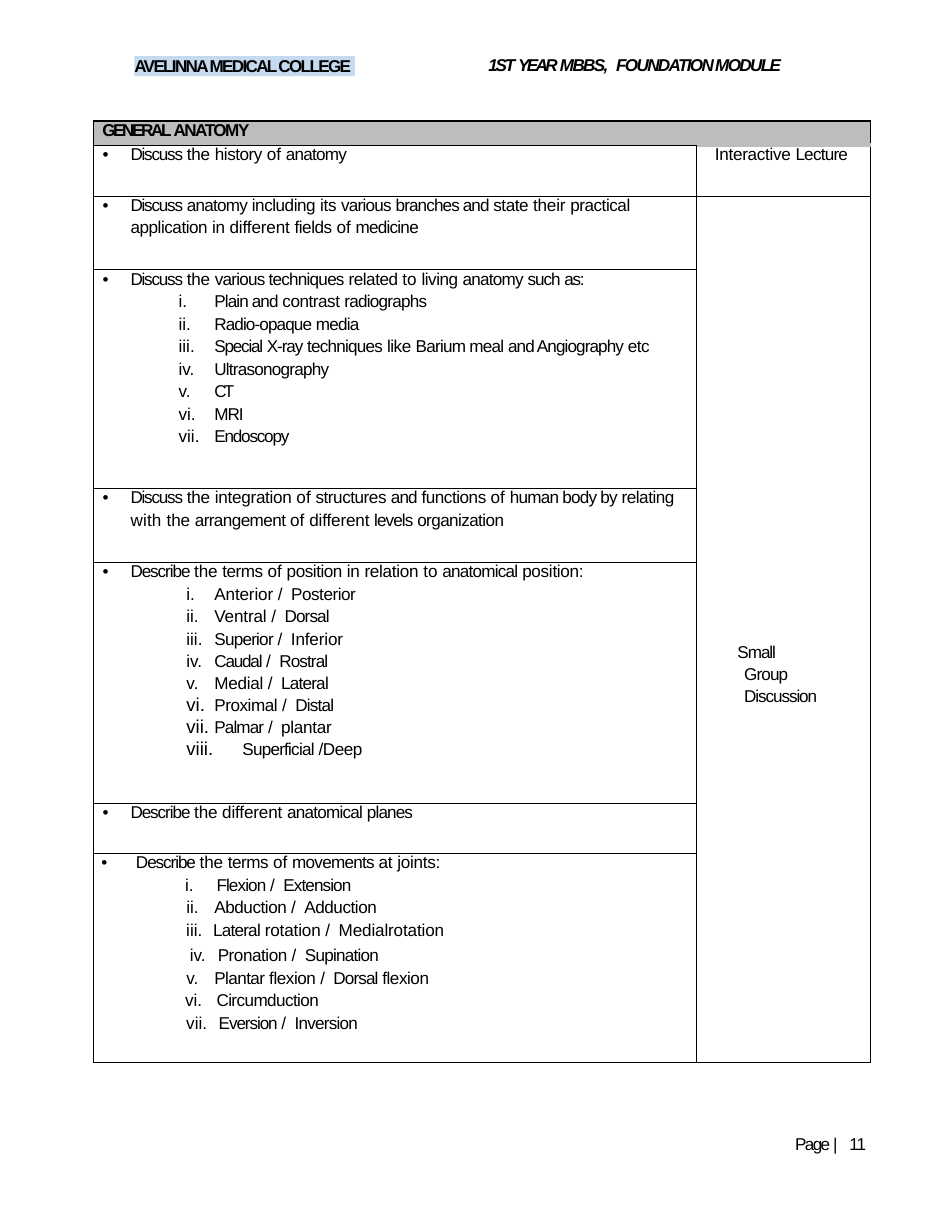
import collections
import itertools

import lxml.etree
import pptx
import pptx.dml.color
import pptx.enum.shapes
import pptx.enum.text
import pptx.oxml.ns
import pptx.util

Pt = pptx.util.Pt
qn = pptx.oxml.ns.qn

Line = collections.namedtuple(
    "Line", "text mark left hanging before mark_size",
    defaults=(None, 23.9, 0, 2.1, None))

# Letter spacing in points for single words; all other words use the default.
DEFAULT_TRACKING = -0.5
TRACKING = {
    "Discuss": -0.8, "Describe": -0.7, "Special": -0.8, "Endoscopy": -0.8,
    "Eversion": -0.7, "Small": -0.7, "Discussion": -0.7, "X-ray": -0.7,
    "MRI": -0.7, "CT": -1.8, "such": -0.7, "as:": -0.8, "Caudal": -0.8,
    "the": -0.1, "of": 0, "to": 0, "in": -0.1, "at": -0.1, "with": 0.1,
    "/": 1.2, "their": -0.1, "its": -0.2, "different": -0.1,
    "and": -0.6, "branches": -0.6, "Angiography": -0.6, "levels": -0.6,
    "planes": -0.6, "Plain": -0.6, "Radio-opaque": -0.6, "Group": -0.6,
    "Dorsal": -0.6, "Rostral": -0.6, "Flexion": -0.6, "Extension": -0.6,
    "Palmar": -0.6, "history": -0.3, "including": -0.3, "state": -0.3,
    "practical": -0.3, "application": -0.3, "fields": -0.3, "related": -0.3,
    "living": -0.3, "contrast": -0.3, "like": -0.3, "etc": -0.3,
    "structures": -0.3, "functions": -0.3, "relating": -0.3, "terms": -0.3,
    "position": -0.3, "Posterior": -0.3, "Proximal": -0.3, "/Deep": -0.3,
    "Abduction": -0.3, "Adduction": -0.3, "Pronation": -0.3, "flexion": -0.3,
    "integration": -0.2, "relation": -0.2, "position:": -0.2, "joints:": -0.2,
    "Medial": -0.2, "plantar": -0.2, "Interactive": -0.2, "Anterior": -0.1,
    "Ventral": -0.1, "Inferior": -0.1, "rotation": -0.1,
    "Medialrotation": -0.1, "arrangement": -0.4, "organization": -0.4,
    "Plantar": -0.4, "Circumduction": -0.4,
    "GENERAL": -1.6, "ANATOMY": -1, "1ST": -1.4, "YEAR": -1.7, "MBBS,": -1.1,
    "FOUNDATION": -1.1, "MODULE": -1.1, "AVELINNA": -1.1, "MEDICAL": -1.1,
    "COLLEGE": -1.1, "Page": -1.1, "|": 2.2, "11": -0.6,
}


def color(value):
    return pptx.dml.color.RGBColor.from_string(value)


def bullet(text, left=23.9, hanging=-18, before=0.2):
    return Line(text, "bullet", left, hanging, before)


def numbered(text, left=77.8, hanging=-18, before=2.2, mark_size=None):
    return Line(text, "roman", left, hanging, before, mark_size)


class SlideBuilder:
    font = {"name": "Arial", "size": Pt(11)}
    ink = "000000"
    gray = "BDBDBD"
    highlight = "C5D9EF"

    def __init__(self, slide):
        self.slide = slide

    def add_runs(self, paragraph, text, **emphasis):
        """Add the text as runs, one for each stretch of equal letter spacing."""
        words = text.split(" ")
        pieces = [word + " " for word in words[:-1]] + words[-1:]
        spacing = lambda piece: TRACKING.get(piece.strip(), DEFAULT_TRACKING)
        for tracking, group in itertools.groupby(pieces, spacing):
            run = paragraph.add_run()
            run.text = "".join(group)
            for name, value in {**self.font, **emphasis}.items():
                setattr(run.font, name, value)
            run.font.color.rgb = color(self.ink)
            run.font._element.set("spc", str(round(tracking * 100)))

    def format_line(self, paragraph, line):
        properties = paragraph._p.get_or_add_pPr()
        properties.set("marL", str(Pt(line.left)))
        properties.set("indent", str(Pt(line.hanging)))
        paragraph.space_before = Pt(line.before)
        if line.mark_size:
            lxml.etree.SubElement(properties, qn("a:buSzPct"), val=str(line.mark_size * 1000))
        if line.mark:
            lxml.etree.SubElement(properties, qn("a:buFont"), typeface="Arial")
        if line.mark == "bullet":
            lxml.etree.SubElement(properties, qn("a:buChar"), char="•")
        elif line.mark == "roman":
            paragraph.level = 1
            lxml.etree.SubElement(properties, qn("a:buAutoNum"), type="romanLcPeriod")

    def fill_frame(self, frame, text, line_spacing=None, **emphasis):
        layout = {"margin_left": 0, "margin_top": 0, "margin_right": 0,
                  "margin_bottom": 0, "word_wrap": True,
                  "auto_size": pptx.enum.text.MSO_AUTO_SIZE.NONE,
                  "vertical_anchor": pptx.enum.text.MSO_ANCHOR.TOP}
        for name, value in layout.items():
            setattr(frame, name, value)
        paragraph = frame.paragraphs[0]
        paragraph.alignment = pptx.enum.text.PP_ALIGN.LEFT
        if line_spacing:
            paragraph.line_spacing = Pt(line_spacing)
        self.add_runs(paragraph, text, **emphasis)

    def title(self, text, left, top, width, height):
        shape = self.slide.shapes.title
        place = {"left": left, "top": top, "width": width, "height": height}
        for name, value in place.items():
            setattr(shape, name, Pt(value))
        self.fill_frame(shape.text_frame, text, bold=True, italic=True)

    def text(self, text, left, top, width, height, line_spacing):
        shape = self.slide.shapes.add_textbox(Pt(left), Pt(top), Pt(width), Pt(height))
        self.fill_frame(shape.text_frame, text, line_spacing)

    def highlighted(self, text, left, top, width, height, line_spacing):
        shape = self.slide.shapes.add_shape(
            pptx.enum.shapes.MSO_SHAPE.RECTANGLE, Pt(left), Pt(top), Pt(width), Pt(height))
        shape.shadow.inherit = False
        shape.fill.solid()
        shape.fill.fore_color.rgb = color(self.highlight)
        shape.line.fill.background()
        self.fill_frame(shape.text_frame, text, line_spacing, bold=True)

    def table(self, left, top, columns, rows):
        frame = self.slide.shapes.add_table(
            len(rows), len(columns), Pt(left), Pt(top), Pt(sum(columns)), Pt(sum(rows)))
        table = frame.table
        table.first_row = table.horz_banding = False
        for column, width in zip(table.columns, columns):
            column.width = Pt(width)
        for row, height in zip(table.rows, rows):
            row.height = Pt(height)
        for cell in table.iter_cells():
            cell.margin_left = cell.margin_top = cell.margin_right = cell.margin_bottom = 0
            self.border(cell)
            cell.fill.background()
        return table

    def border(self, cell, **special):
        """Draw all four sides; special gives (width, color) for single sides."""
        properties = cell._tc.get_or_add_tcPr()
        for index, side in enumerate(("L", "R", "T", "B")):
            tag = qn("a:ln" + side)
            for old in properties.findall(tag):
                properties.remove(old)
            width, value = special.get(side, (0.5, self.ink))
            line = lxml.etree.Element(tag, w=str(Pt(width)))
            fill = lxml.etree.SubElement(line, qn("a:solidFill"))
            lxml.etree.SubElement(fill, qn("a:srgbClr"), val=value)
            properties.insert(index, line)

    def cell(self, cell, lines, **emphasis):
        frame = cell.text_frame
        for index, line in enumerate(lines):
            paragraph = frame.add_paragraph() if index else frame.paragraphs[0]
            self.format_line(paragraph, line)
            for part, text in enumerate(line.text.split("\n")):
                if part:
                    paragraph.add_line_break()
                self.add_runs(paragraph, text, **emphasis)


OBJECTIVES = [
    [bullet("Discuss the history of anatomy", before=1.1)],
    [bullet("Discuss anatomy including its various branches and state their practical"),
     Line("application in different fields of medicine")],
    [bullet("Discuss the various techniques related to living anatomy such as:")]
    + [numbered(text, hanging=-23) for text in (
        "Plain and contrast radiographs", "Radio-opaque media",
        "Special X-ray techniques like Barium meal and Angiography etc",
        "Ultrasonography", "CT", "MRI", "Endoscopy")],
    [bullet("Discuss the integration of structures and functions of human body by relating"),
     Line("with the arrangement of different levels organization")],
    [bullet("Describe the terms of position in relation to anatomical position:")]
    + [numbered(text) for text in (
        "Anterior / Posterior", "Ventral / Dorsal", "Superior / Inferior",
        "Caudal / Rostral", "Medial / Lateral")]
    + [numbered(text, before=1.8, mark_size=109) for text in (
        "Proximal / Distal", "Palmar / plantar")]
    + [numbered("Superficial /Deep", 95.8, -36, 1.8, 109)],
    [bullet("Describe the different anatomical planes")],
    [bullet("Describe the terms of movements at joints:", 27.4, -22.3, 0.8),
     numbered("Flexion / Extension", 79.2, -20.2),
     numbered("Abduction / Adduction"),
     numbered("Lateral rotation / Medialrotation", 77, -17.3),
     numbered("Pronation / Supination", 80, -18, 4.3),
     numbered("Plantar flexion / Dorsal flexion"),
     numbered("Circumduction", 79.2, -20.2),
     numbered("Eversion / Inversion", 80.6, -20.9)],
]


def main():
    presentation = pptx.Presentation()
    presentation.slide_width, presentation.slide_height = Pt(612), Pt(792)
    builder = SlideBuilder(presentation.slides.add_slide(presentation.slide_layouts[5]))
    builder.title("1ST YEAR MBBS,  FOUNDATION MODULE", 313.9, 34.8, 243, 14.4)
    builder.highlighted("AVELINNA MEDICAL COLLEGE", 86.4, 36, 141.8, 13, 12.9)
    builder.text("Page | 11", 511.2, 730, 48, 13, 11.5)

    table = builder.table(60, 77.8, [387.4, 112.3],
                          [15.5, 32.7, 47.5, 140.4, 47.5, 155.2, 32, 134.7])
    heading, lecture, group = table.cell(0, 0), table.cell(1, 1), table.cell(2, 1)
    heading.merge(table.cell(0, 1))
    group.merge(table.cell(7, 1))
    heading.fill.solid()
    heading.fill.fore_color.rgb = color(builder.gray)
    builder.border(heading, T=(1.5, builder.ink))
    builder.border(lecture, T=(3, builder.gray))
    builder.cell(heading, [Line("GENERAL ANATOMY", left=5.8, before=0.1)], bold=True)
    builder.cell(lecture, [Line("Interactive Lecture", left=12.2, before=8.7)])
    builder.cell(group, [Line("Small\nGroup\nDiscussion", left=31, hanging=-4.3, before=0)])
    group.text_frame.paragraphs[0].line_spacing = 1.17
    group.vertical_anchor = pptx.enum.text.MSO_ANCHOR.MIDDLE
    group.margin_top = Pt(56)
    for row, lines in enumerate(OBJECTIVES, start=1):
        builder.cell(table.cell(row, 0), lines)
    presentation.save("out.pptx")


if __name__ == "__main__":
    main()
